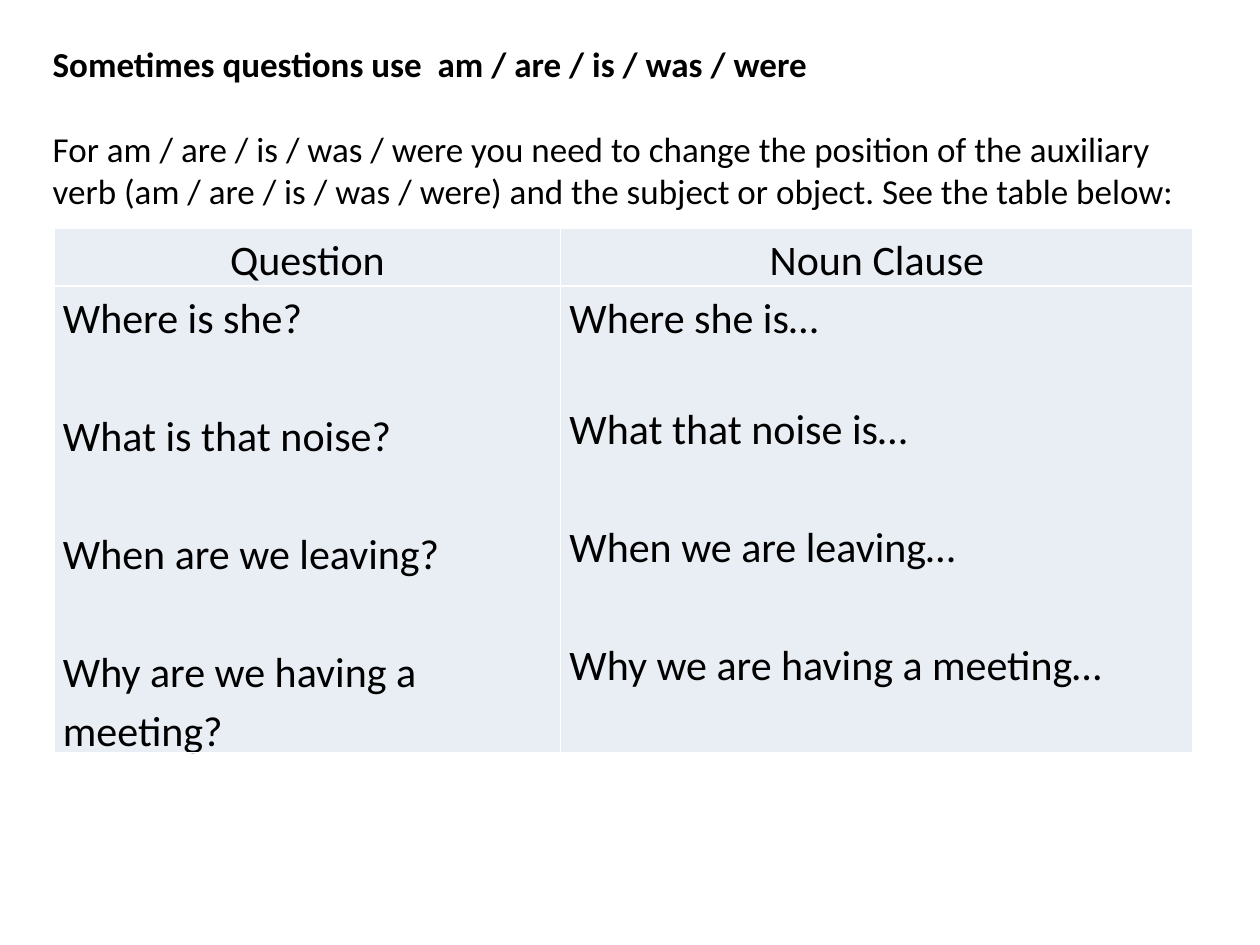
from lxml import etree
from pptx import Presentation
from pptx.dml.color import RGBColor
from pptx.enum import text
from pptx.oxml.ns import qn
from pptx.util import Inches, Pt

COLORS = {"ink": "000000", "cell": "E9EDF4", "border": "FFFFFF"}
FONT = "Calibri"
BLANK_LAYOUT = 6

INTRO = [
    ("Sometimes questions use  am / are / is / was / were", {"bold": True}, {}),
    ("For am / are / is / was / were you need to change the position of the "
     "auxiliary verb (am / are / is / was / were) and the subject or object. "
     "See the table below:", {"bold": False}, {"space_before": Pt(24.4)}),
]
HEADINGS = ["Question", "Noun Clause"]
# Each column: its lines and the space before the second line
EXAMPLES = [
    (["Where is she?", "What is that noise?", "When are we leaving?",
      "Why are we having a meeting?"], 33.7),
    (["Where she is…", "What that noise is…", "When we are leaving…",
      "Why we are having a meeting…"], 29.7),
]
LINE_GAP = 33.7


class SlideBuilder:
    def __init__(self, slide):
        self.slide = slide

    def add_lines(self, frame, lines, size):
        """Fill a frame with (wording, font values, paragraph values) lines."""
        for index, (wording, font_values, layout) in enumerate(lines):
            line = frame.paragraphs[0] if index == 0 else frame.add_paragraph()
            for name, value in layout.items():
                setattr(line, name, value)
            run = line.add_run()
            run.text = wording
            for name, value in {"name": FONT, "size": Pt(size), **font_values}.items():
                setattr(run.font, name, value)
            run.font.color.rgb = RGBColor.from_string(COLORS["ink"])

    def text_box(self, left, top, width, height, lines, size):
        frame = self.slide.shapes.add_textbox(
            Inches(left), Inches(top), Inches(width), Inches(height)).text_frame
        frame.word_wrap = True
        frame.auto_size = text.MSO_AUTO_SIZE.SHAPE_TO_FIT_TEXT
        self.add_lines(frame, lines, size)

    def table(self, left, top, widths, heights):
        grid = self.slide.shapes.add_table(
            len(heights), len(widths), Inches(left), Inches(top),
            Inches(sum(widths)), Inches(sum(heights))).table
        grid.first_row = grid.horz_banding = False
        for column, width in zip(grid.columns, widths):
            column.width = Inches(width)
        for row, height in zip(grid.rows, heights):
            row.height = Inches(height)
        return grid

    def cell(self, cell, lines, size):
        margins = {"margin_left": 0.07, "margin_right": 0.07,
                   "margin_top": 0, "margin_bottom": 0}
        for name, value in margins.items():
            setattr(cell, name, Inches(value))
        self.borders(cell)
        cell.fill.solid()
        cell.fill.fore_color.rgb = RGBColor.from_string(COLORS["cell"])
        self.add_lines(cell.text_frame, lines, size)

    def borders(self, cell):
        properties = cell._tc.get_or_add_tcPr()
        for side in ("a:lnL", "a:lnR", "a:lnT", "a:lnB"):
            edge = etree.SubElement(properties, qn(side), w=str(Pt(1)))
            fill = etree.SubElement(edge, qn("a:solidFill"))
            etree.SubElement(fill, qn("a:srgbClr"), val=COLORS["border"])


def main():
    deck = Presentation()
    deck.slide_width, deck.slide_height = Inches(10), Inches(7.5)
    builder = SlideBuilder(deck.slides.add_slide(deck.slide_layouts[BLANK_LAYOUT]))

    # Rule and explanation
    builder.text_box(0.32, 0.29, 9.36, 1.45, INTRO, size=20)

    # Questions beside their noun clauses
    clauses = builder.table(0.43, 1.81, widths=[4.02, 5.02], heights=[0.42, 3.4])
    spacing = {"line_spacing": 1.15}
    centred = {**spacing, "alignment": text.PP_ALIGN.CENTER}
    for column, (heading, (examples, second_gap)) in enumerate(zip(HEADINGS, EXAMPLES)):
        builder.cell(clauses.cell(0, column), [(heading, {}, centred)], size=24)
        gaps = [0, second_gap, LINE_GAP, LINE_GAP]
        lines = [(example, {}, {**spacing, "space_before": Pt(gap)} if gap else spacing)
                 for example, gap in zip(examples, gaps)]
        builder.cell(clauses.cell(1, column), lines, size=24)

    deck.save("out.pptx")


if __name__ == "__main__":
    main()
